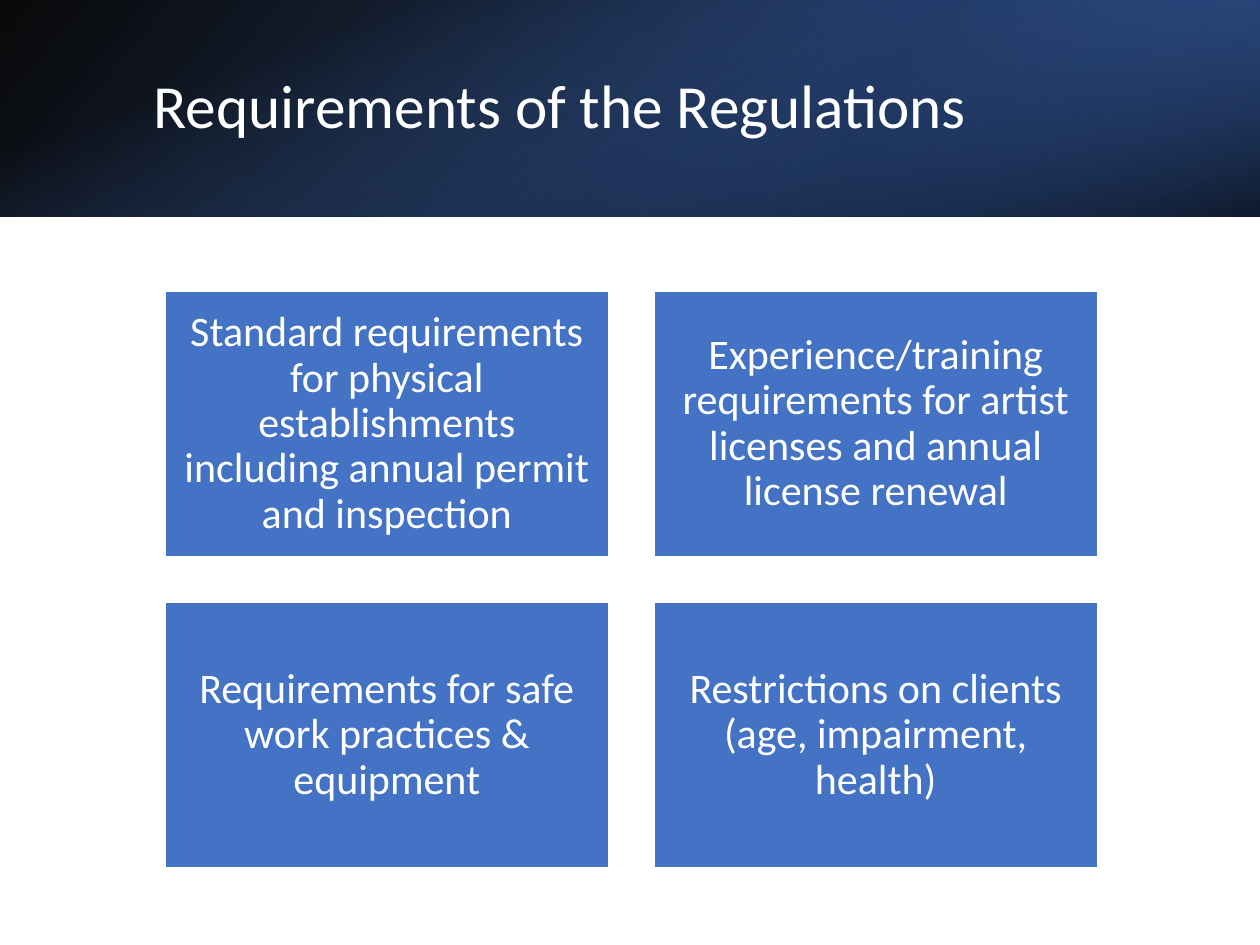
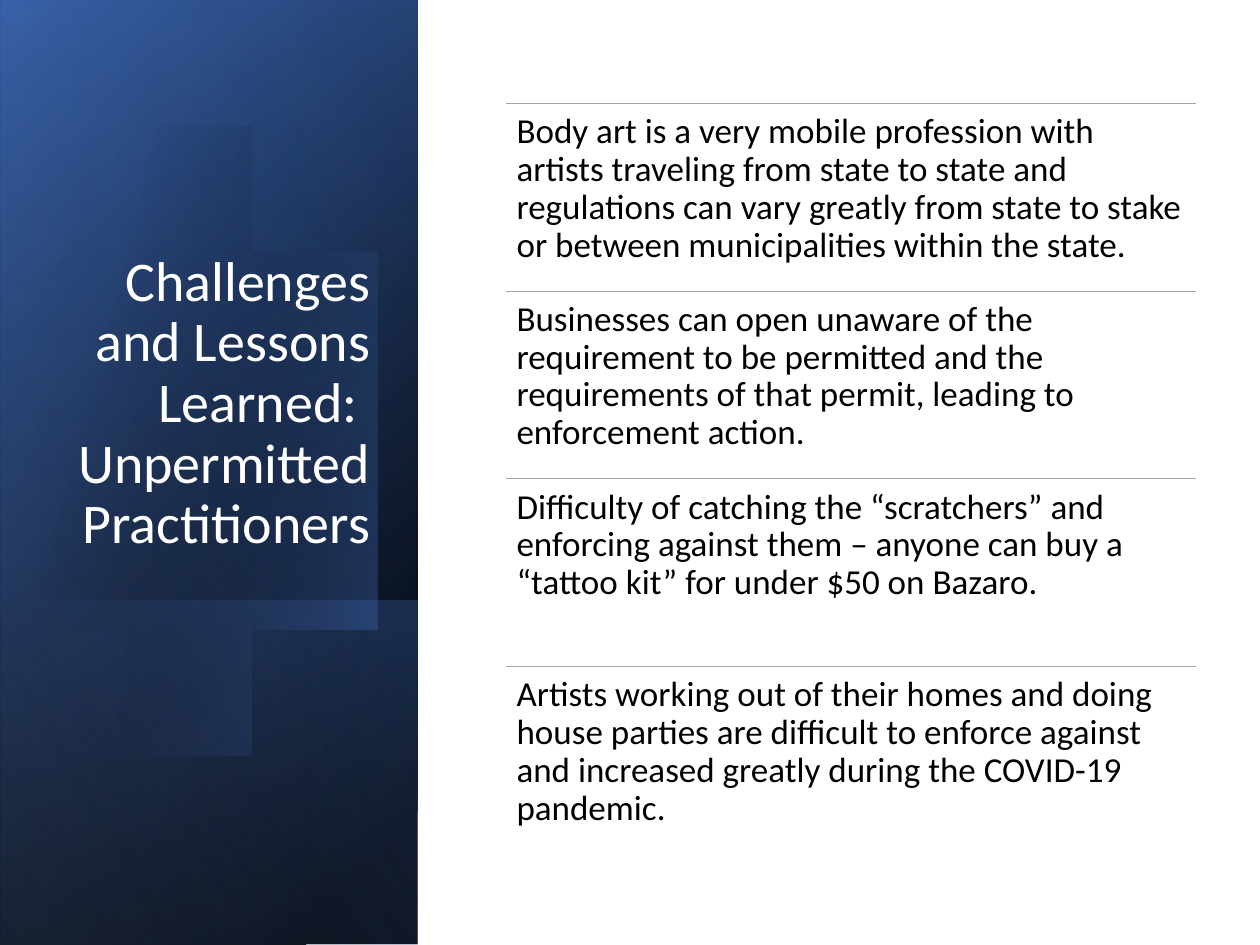
from pptx import Presentation
from pptx.dml.color import RGBColor
from pptx.enum.shapes import MSO_CONNECTOR, MSO_SHAPE
from pptx.enum.text import MSO_ANCHOR, MSO_AUTO_SIZE, PP_ALIGN
from pptx.oxml import parse_xml
from pptx.oxml.ns import nsdecls, qn
from pptx.util import Inches, Pt

FONT = "Calibri"
WHITE = RGBColor(0xFF, 0xFF, 0xFF)
BLACK = RGBColor(0x00, 0x00, 0x00)
GREY = RGBColor(0xA5, 0xA5, 0xA5)
BLUE = RGBColor(0x44, 0x72, 0xC4)
LIGHT_BLUE = RGBColor(0x8F, 0xAA, 0xDC)
DEEP_BLUE = RGBColor(0x2F, 0x55, 0x97)
NAVY = RGBColor(0x20, 0x38, 0x64)

BAND_HEIGHT = 1.72
SIDEBAR = (-2.09, 2.09, 7.5, 3.31)  # turned by 90 degrees

REQUIREMENTS = [
    "Standard requirements for physical establishments including annual permit and inspection",
    "Experience/training requirements for artist licenses and annual license renewal",
    "Requirements for safe work practices & equipment",
    "Restrictions on clients (age, impairment, health)",
]
CHALLENGES = [
    "Body art is a very mobile profession with artists traveling from state to state and "
    "regulations can vary greatly from state to stake or between municipalities within the state.",
    "Businesses can open unaware of the requirement to be permitted and the requirements of "
    "that permit, leading to enforcement action.",
    "Difficulty of catching the “scratchers” and enforcing against them – anyone can buy a "
    "“tattoo kit” for under $50 on Bazaro.",
    "Artists working out of their homes and doing house parties are difficult to enforce "
    "against and increased greatly during the COVID-19 pandemic.",
]
BLOB_START = (0.96, 1.14)
BLOB_RIGHT = [
    ((1.71, 1.22), (2.44, 1.92), (2.73, 2.9)),
    ((3.07, 4.12), (2.62, 5.31), (1.71, 5.57)),
    ((1.14, 5.74), (0.53, 5.5), (0.07, 5)),
]
BLOB_LEFT = [(-0.03, 4.88), (-0.25, 1.66), (-0.15, 1.54)]
BLOB_TOP = [
    ((0.02, 1.37), (0.22, 1.25), (0.45, 1.18)),
    ((0.62, 1.13), (0.79, 1.12), BLOB_START),
]


def set_gradient(shape, stops, angle):
    """Fill with (position, colour, opacity) stops in percent; angle is clockwise."""
    shape.shadow.inherit = False
    shape.line.fill.background()
    shape.fill.background()
    gs = "".join(
        f'<a:gs pos="{pos * 1000}"><a:srgbClr val="{color}">'
        f'<a:alpha val="{opacity * 1000}"/></a:srgbClr></a:gs>'
        for pos, color, opacity in stops
    )
    gradient = parse_xml(
        f'<a:gradFill {nsdecls("a")} rotWithShape="1"><a:gsLst>{gs}</a:gsLst>'
        f'<a:lin ang="{angle * 60000}" scaled="0"/></a:gradFill>'
    )
    spPr = shape._element.spPr
    spPr.replace(spPr.find(qn("a:noFill")), gradient)


def add_panel(s, box, stops, angle, rotation=0, flip=True):
    panel = s.shapes.add_shape(MSO_SHAPE.RECTANGLE, *map(Inches, box))
    panel.rotation = rotation
    if flip:
        panel._element.spPr.xfrm.set("flipH", "1")
    set_gradient(panel, stops, angle)


def curve_points(start, curves, steps=12):
    """Points along a chain of cubic Bézier curves."""
    points = []
    for c1, c2, end in curves:
        for i in range(1, steps + 1):
            t = i / steps
            u = 1 - t
            points.append(tuple(
                u**3 * a + 3 * u * u * t * b + 3 * u * t * t * c + t**3 * d
                for a, b, c, d in zip(start, c1, c2, end)
            ))
        start = end
    return points


def add_blob(s):
    points = curve_points(BLOB_START, BLOB_RIGHT) + BLOB_LEFT
    points += curve_points(BLOB_LEFT[-1], BLOB_TOP)
    builder = s.shapes.build_freeform(*BLOB_START, scale=Inches(1))
    builder.add_line_segments(points, close=True)
    set_gradient(builder.convert_to_shape(), [(29, BLACK, 0), (100, BLUE, 43)], 14)


def set_text(shape, text, size, color, align, anchor, inset=None):
    tf = shape.text_frame
    tf.text = text
    tf.word_wrap = True
    tf.auto_size = MSO_AUTO_SIZE.NONE
    tf.vertical_anchor = anchor
    if inset is not None:
        tf.margin_left = tf.margin_right = Inches(inset)
        tf.margin_top = tf.margin_bottom = Inches(inset)
    p = tf.paragraphs[0]
    p.alignment = align
    p.line_spacing = 0.9
    p.space_before = Pt(0)
    for r in p.runs:
        r.font.name = FONT
        r.font.size = Pt(size)
        r.font.color.rgb = color


def set_title(s, text, box, size, align, anchor):
    """Fill the title placeholder and bring it in front of the panels."""
    title = s.shapes.title
    title.left, title.top, title.width, title.height = map(Inches, box)
    set_text(title, text, size, WHITE, align, anchor)
    s.shapes._spTree.append(title._element)


def add_card(s, text, left, top):
    card = s.shapes.add_shape(
        MSO_SHAPE.RECTANGLE, Inches(left), Inches(top), Inches(3.52), Inches(2.11))
    card.shadow.inherit = False
    card.fill.solid()
    card.fill.fore_color.rgb = BLUE
    card.line.color.rgb = WHITE
    card.line.width = Pt(1)
    set_text(card, text, 24, WHITE, PP_ALIGN.CENTER, MSO_ANCHOR.MIDDLE, 0.1)


def add_ruled_text(s, text, top, left=4.02, width=5.47, height=1.49):
    rule = s.shapes.add_connector(
        MSO_CONNECTOR.STRAIGHT, Inches(left), Inches(top), Inches(left + width), Inches(top))
    rule.line.color.rgb = GREY
    rule.line.width = Pt(0.5)
    rule._element.spPr.append(parse_xml(f'<a:effectLst {nsdecls("a")}/>'))
    box = s.shapes.add_textbox(Inches(left), Inches(top), Inches(width), Inches(height))
    set_text(box, text, 20, BLACK, PP_ALIGN.LEFT, MSO_ANCHOR.TOP, 0.08)


def add_requirements_slide(prs, layout):
    s = prs.slides.add_slide(layout)
    add_panel(s, (0, 0, 10, BAND_HEIGHT), [(0, BLACK, 96), (100, DEEP_BLUE, 100)], 140)
    add_panel(s, (6.67, 0, 3.33, BAND_HEIGHT), [(19, NAVY, 68), (100, BLUE, 79)], 320, 180)
    add_panel(s, (4.14, -4.14, BAND_HEIGHT, 10), [(23, BLUE, 0), (99, BLACK, 74)],
              340, 90, flip=False)
    set_title(s, "Requirements of the Regulations", (1.12, 0.38, 8.24, 0.96), 35,
              PP_ALIGN.LEFT, MSO_ANCHOR.MIDDLE)
    for i, text in enumerate(REQUIREMENTS):
        row, col = divmod(i, 2)
        add_card(s, text, 1.31 + col * 3.88, 2.31 + row * 2.47)


def add_challenges_slide(prs, layout):
    s = prs.slides.add_slide(layout)
    add_panel(s, SIDEBAR, [(8, BLACK, 100), (100, DEEP_BLUE, 100)], 50, 90)
    add_panel(s, SIDEBAR, [(0, BLACK, 0), (99, BLUE, 46)], 30, 90)
    add_panel(s, (0.29, 4.48, 2.74, 3.31), [(2, BLUE, 29), (100, BLACK, 30)], 130, 90)
    add_blob(s)
    add_panel(s, SIDEBAR, [(0, BLACK, 0), (99, LIGHT_BLUE, 11)], 120, 90)
    set_title(s, "Challenges and Lessons Learned: \vUnpermitted Practitioners",
              (0.48, 1.84, 2.56, 2.62), 32, PP_ALIGN.RIGHT, MSO_ANCHOR.BOTTOM)
    for i, text in enumerate(CHALLENGES):
        add_ruled_text(s, text, 0.82 + i * 1.49)


def main():
    prs = Presentation()
    prs.slide_width, prs.slide_height = Inches(10), Inches(7.5)
    title_only = prs.slide_layouts[5]
    add_requirements_slide(prs, title_only)
    add_challenges_slide(prs, title_only)
    prs.save("out.pptx")


if __name__ == "__main__":
    main()
